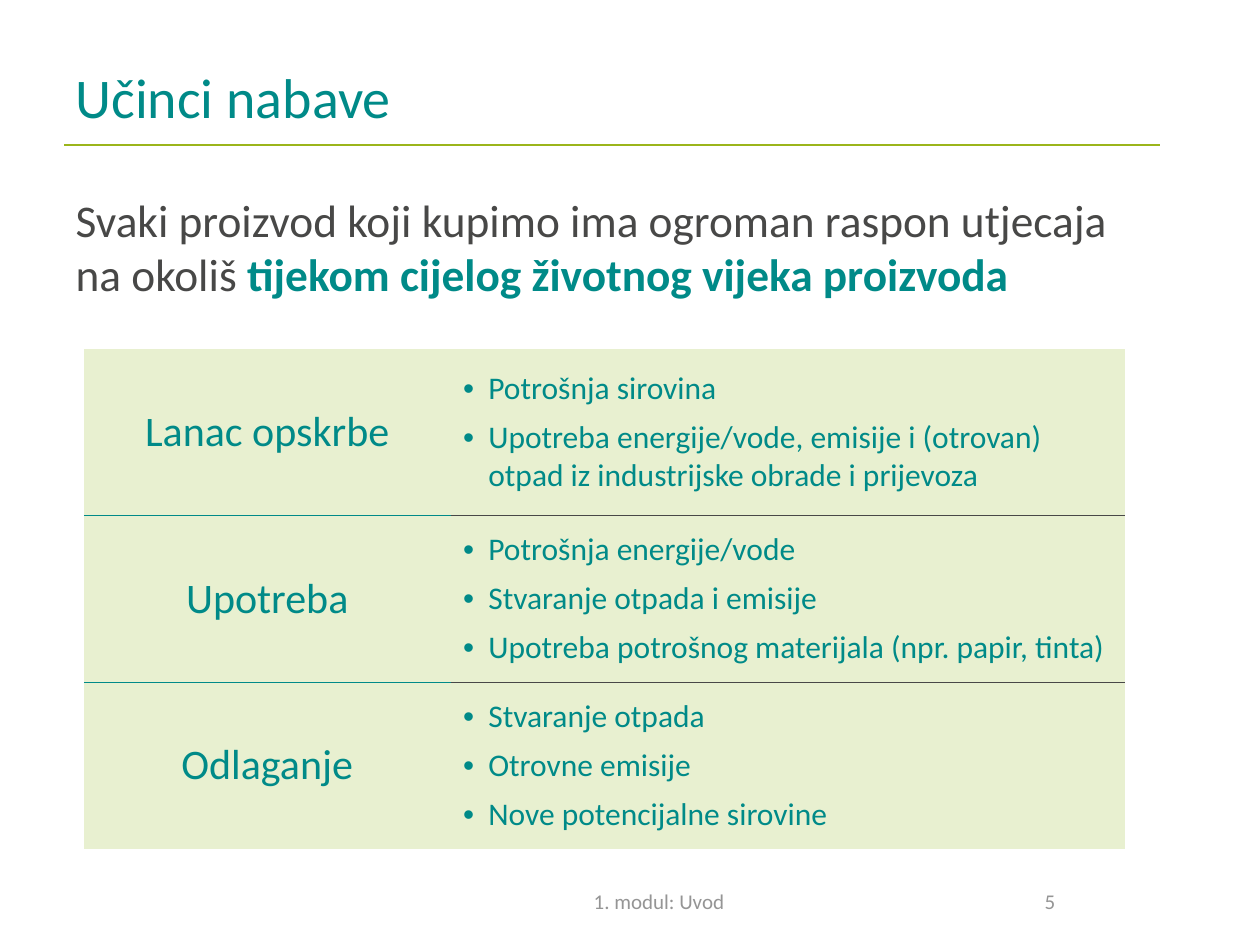
from lxml.etree import SubElement
from pptx import Presentation
from pptx.dml.color import RGBColor
from pptx.enum.shapes import MSO_CONNECTOR as Connector
from pptx.enum.text import MSO_ANCHOR as Anchor, MSO_AUTO_SIZE as AutoSize, PP_ALIGN as Align
from pptx.oxml.ns import qn
from pptx.util import Pt

TEAL, DARK, GREY, GREEN, PALE = "008A88", "484847", "959595", "9BB51B", "E8F0D0"

STAGES = [
    ("Lanac opskrbe", [
        "Potrošnja sirovina",
        "Upotreba energije/vode, emisije i (otrovan) otpad iz industrijske obrade i prijevoza",
    ]),
    ("Upotreba", [
        "Potrošnja energije/vode",
        "Stvaranje otpada i emisije",
        "Upotreba potrošnog materijala (npr. papir, tinta)",
    ]),
    ("Odlaganje", [
        "Stvaranje otpada",
        "Otrovne emisije",
        "Nove potencijalne sirovine",
    ]),
]


def color(value):
    return RGBColor.from_string(value)


class Deck:
    font = "Calibri"

    def __init__(self, width, height):
        self.prs = Presentation()
        self.prs.slide_width, self.prs.slide_height = Pt(width), Pt(height)
        self.slide = self.prs.slides.add_slide(self.prs.slide_layouts[1])

    def add_run(self, paragraph, text, size, ink, bold=False):
        run = paragraph.add_run()
        run.text = text
        run.font.name, run.font.size, run.font.bold = self.font, Pt(size), bold
        run.font.color.rgb = color(ink)

    def set_bullet(self, paragraph, mark=None, indent=0):
        props = paragraph._p.get_or_add_pPr()
        props.set("marL", str(Pt(indent)))
        props.set("indent", str(-Pt(indent)))
        if mark:
            SubElement(props, qn("a:buFont"), typeface="Arial")
            SubElement(props, qn("a:buChar"), char=mark)
        else:
            SubElement(props, qn("a:buNone"))

    def place(self, shape, box, anchor):
        shape.left, shape.top, shape.width, shape.height = map(Pt, box)
        frame = shape.text_frame
        frame.word_wrap, frame.auto_size = True, AutoSize.NONE
        frame.vertical_anchor = anchor
        return frame.paragraphs[0]

    def title(self, text, box):
        heading = self.place(self.slide.shapes.title, box, Anchor.MIDDLE)
        heading.alignment = Align.LEFT
        self.add_run(heading, text, 32, TEAL)

    def body(self, runs, box):
        statement = self.place(self.slide.placeholders[1], box, Anchor.TOP)
        self.set_bullet(statement)
        statement.space_before = Pt(0)
        for text, ink, bold in runs:
            self.add_run(statement, text, 25.9, ink, bold)

    def footer(self, text, box):
        note = self.place(self.slide.shapes.add_textbox(*map(Pt, box)), box, Anchor.MIDDLE)
        note.alignment = Align.CENTER
        self.add_run(note, text, 12, GREY)

    def rule(self, left, right, y):
        line = self.slide.shapes.add_connector(Connector.STRAIGHT, Pt(left), Pt(y), Pt(right), Pt(y))
        line.line.color.rgb, line.line.width = color(GREEN), Pt(0.75)
        SubElement(line._element.spPr, qn("a:effectLst"))

    def style_cell(self, cell, top, bottom):
        props = cell._tc.get_or_add_tcPr()
        for side, ink in (("L", None), ("R", None), ("T", top), ("B", bottom)):
            edge = SubElement(props, qn(f"a:ln{side}"), w=str(Pt(1)))
            if ink:
                SubElement(SubElement(edge, qn("a:solidFill")), qn("a:srgbClr"), val=ink)
            else:
                SubElement(edge, qn("a:noFill"))
        cell.fill.solid()
        cell.fill.fore_color.rgb = color(PALE)
        cell.vertical_anchor = Anchor.MIDDLE

    def table(self, stages, left, top, widths, row_height):
        count = len(stages)
        grid = self.slide.shapes.add_table(
            count, len(widths), Pt(left), Pt(top), Pt(sum(widths)), Pt(row_height * count)).table
        grid.first_row = grid.horz_banding = False
        for column, width in zip(grid.columns, widths):
            column.width = Pt(width)
        for index, (stage, impacts) in enumerate(stages):
            grid.rows[index].height = Pt(row_height)
            stage_cell, impact_cell = grid.rows[index].cells
            for cell, ink in ((stage_cell, TEAL), (impact_cell, DARK)):
                self.style_cell(cell, ink if index else None, ink if index < count - 1 else None)
            label = stage_cell.text_frame.paragraphs[0]
            label.alignment = Align.CENTER
            self.add_run(label, stage, 24, TEAL)
            frame = impact_cell.text_frame
            for order, impact in enumerate(impacts):
                item = frame.add_paragraph() if order else frame.paragraphs[0]
                self.set_bullet(item, "•", 14.4)
                item.space_before = Pt(6 if order else 0)
                self.add_run(item, impact, 18, TEAL)

    def save(self):
        self.prs.save("out.pptx")


def main():
    deck = Deck(720, 540)
    deck.rule(36.7, 663, 82.8)
    deck.title("Učinci nabave", (36, 21.6, 630, 67))
    deck.body([
        ("Svaki proizvod koji kupimo ima ogroman raspon utjecaja na okoliš ", DARK, False),
        ("tijekom cijelog životnog vijeka proizvoda", TEAL, True),
    ], (36, 106, 613.5, 90.7))
    deck.table(STAGES, 48, 199.5, (209.5, 385.5), 95.2)
    deck.footer("1. modul: Uvod", (206.6, 500.5, 340, 28.8))
    deck.footer("5", (516, 500.5, 168, 28.8))
    deck.save()


if __name__ == "__main__":
    main()
